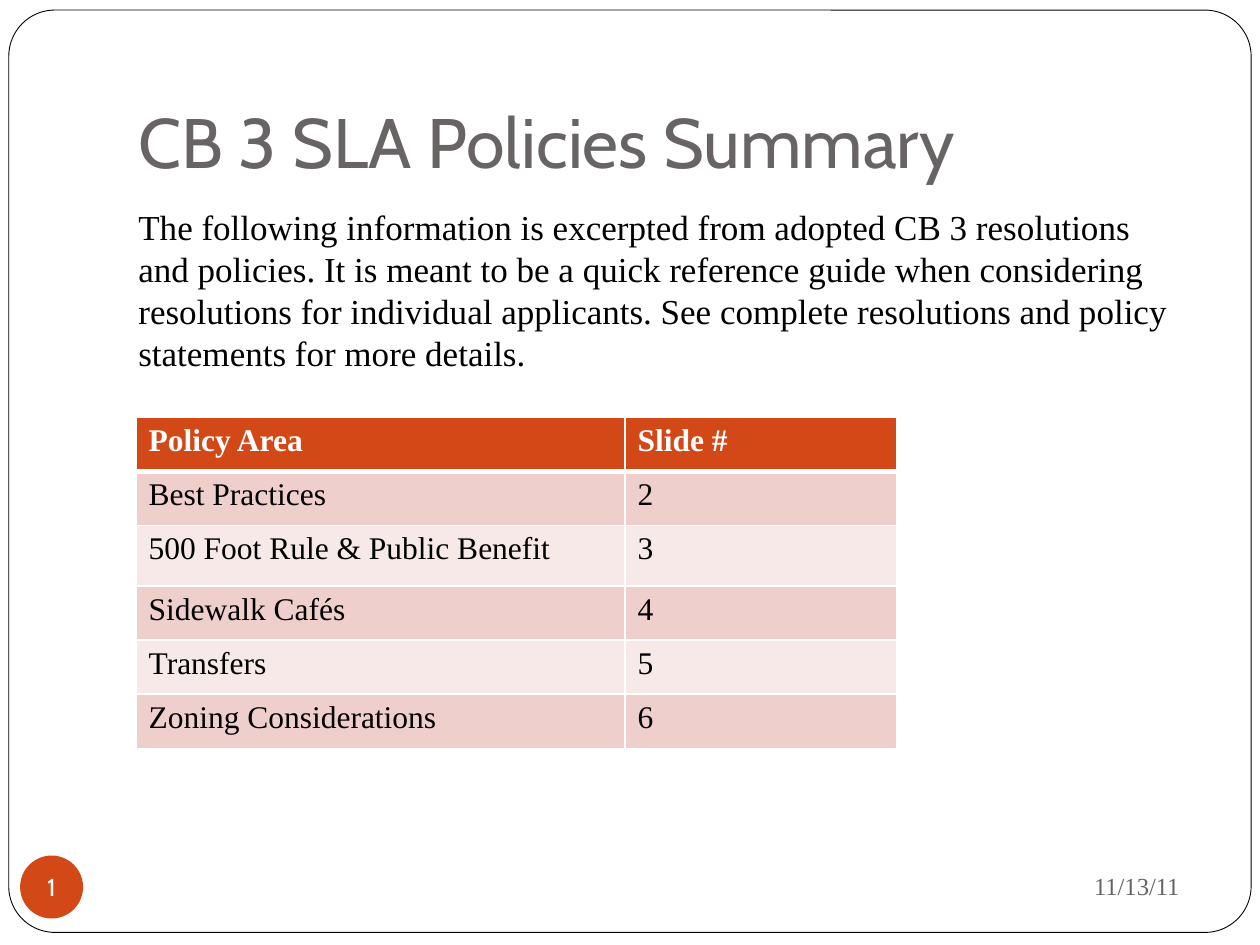
from lxml import etree
from pptx import Presentation
from pptx.dml.color import RGBColor
from pptx.enum.shapes import MSO_SHAPE
from pptx.enum.text import MSO_ANCHOR, PP_ALIGN
from pptx.oxml.ns import qn
from pptx.util import Inches, Pt

ROUNDED, OVAL = MSO_SHAPE.ROUNDED_RECTANGLE, MSO_SHAPE.OVAL
TOP, MIDDLE, BOTTOM = MSO_ANCHOR.TOP, MSO_ANCHOR.MIDDLE, MSO_ANCHOR.BOTTOM
LEFT, CENTER, RIGHT = PP_ALIGN.LEFT, PP_ALIGN.CENTER, PP_ALIGN.RIGHT

HEADING_FONT, BODY_FONT = "Cabin", "Times New Roman"
ORANGE, GRAY, BLACK, WHITE = "D34817", "696464", "000000", "FFFFFF"
BANDS = ("EFCFCC", "F7E9E8")

POLICIES = [
    ("Policy Area", "Slide #"),
    ("Best Practices", "2"),
    ("500 Foot Rule & Public Benefit", "3"),
    ("Sidewalk Cafés", "4"),
    ("Transfers", "5"),
    ("Zoning Considerations", "6"),
]
COLUMN_WIDTHS = (3.88, 2.16)
ROW_HEIGHTS = (0.43, 0.43, 0.48, 0.43, 0.43, 0.43)


def color(hex_string):
    return RGBColor.from_string(hex_string)


def write_text(text_frame, text, size, font_name, text_color, align=LEFT, bold=False):
    text_frame.text = text
    paragraph = text_frame.paragraphs[0]
    paragraph.alignment = align
    font = paragraph.runs[0].font
    font.size, font.name, font.bold = Pt(size), font_name, bold
    font.color.rgb = color(text_color)
    return paragraph


def add_text(slide, box, text, size, font_name, text_color, align=LEFT, anchor=TOP):
    text_frame = slide.shapes.add_textbox(*map(Inches, box)).text_frame
    text_frame.word_wrap = True
    text_frame.vertical_anchor = anchor
    paragraph = write_text(text_frame, text, size, font_name, text_color, align)
    return text_frame, paragraph


def add_filled_shape(slide, kind, box, fill):
    shape = slide.shapes.add_shape(kind, *map(Inches, box))
    shape.shadow.inherit = False
    shape.fill.solid()
    shape.fill.fore_color.rgb = color(fill)
    shape.line.fill.background()
    return shape


def add_frame(slide, box):
    frame = add_filled_shape(slide, ROUNDED, box, WHITE)
    frame.adjustments[0] = 0.05
    frame.line.color.rgb = color(BLACK)
    frame.line.width = Pt(0.5)


def add_title(slide, box, text):
    text_frame, _ = add_text(slide, box, text, 40, HEADING_FONT, GRAY, anchor=BOTTOM)
    text_frame.margin_bottom = Inches(0.1)


def add_introduction(slide, box, text):
    _, paragraph = add_text(slide, box, text, 20, BODY_FONT, BLACK)
    paragraph.space_before = Pt(5.8)


def add_slide_number(slide, box, number):
    badge = add_filled_shape(slide, OVAL, box, ORANGE)
    text_frame = badge.text_frame
    text_frame.margin_left = text_frame.margin_right = 0
    text_frame.margin_top = text_frame.margin_bottom = 0
    text_frame.word_wrap = False
    text_frame.vertical_anchor = MIDDLE
    write_text(text_frame, number, 14, HEADING_FONT, WHITE, CENTER)


def set_cell_borders(cell, widths):
    """Draw white borders; widths maps L, R, T and B to points, in that order."""
    properties = cell._tc.get_or_add_tcPr()
    for side, width in widths.items():
        line = etree.SubElement(properties, qn(f"a:ln{side}"), w=str(Pt(width)))
        fill = etree.SubElement(line, qn("a:solidFill"))
        etree.SubElement(fill, qn("a:srgbClr"), val=WHITE)


def add_policy_table(slide, left, top):
    size = (sum(COLUMN_WIDTHS), sum(ROW_HEIGHTS))
    table = slide.shapes.add_table(
        len(POLICIES), len(COLUMN_WIDTHS), *map(Inches, (left, top, *size))
    ).table
    for column, width in zip(table.columns, COLUMN_WIDTHS):
        column.width = Inches(width)
    for index, (values, height) in enumerate(zip(POLICIES, ROW_HEIGHTS)):
        table.rows[index].height = Inches(height)
        header = index == 0
        fill = ORANGE if header else BANDS[(index - 1) % 2]
        text_color = WHITE if header else BLACK
        borders = {"L": 1, "R": 1, "T": 3 if index == 1 else 1, "B": 3 if header else 1}
        for cell, value in zip(table.rows[index].cells, values):
            set_cell_borders(cell, borders)
            cell.fill.solid()
            cell.fill.fore_color.rgb = color(fill)
            write_text(cell.text_frame, value, 18, BODY_FONT, text_color, bold=header)


def main():
    presentation = Presentation()
    presentation.slide_width, presentation.slide_height = Inches(10), Inches(7.5)
    slide = presentation.slides.add_slide(presentation.slide_layouts[6])
    add_frame(slide, (0.07, 0.08, 9.86, 7.32))
    add_title(slide, (1, 0.3, 8.5, 1.25), "CB 3 SLA Policies Summary")
    add_introduction(
        slide,
        (1, 1.58, 8.5, 5),
        "The following information is excerpted from adopted CB 3 resolutions and "
        "policies. It is meant to be a quick reference guide when considering "
        "resolutions for individual applicants. See complete resolutions and policy "
        "statements for more details.",
    )
    add_text(slide, (6.75, 6.77, 2.71, 0.52), "11/13/11", 14, BODY_FONT, GRAY, RIGHT, MIDDLE)
    add_slide_number(slide, (0.16, 6.79, 0.5, 0.5), "1")
    add_policy_table(slide, 1.08, 3.31)
    presentation.save("out.pptx")


if __name__ == "__main__":
    main()
